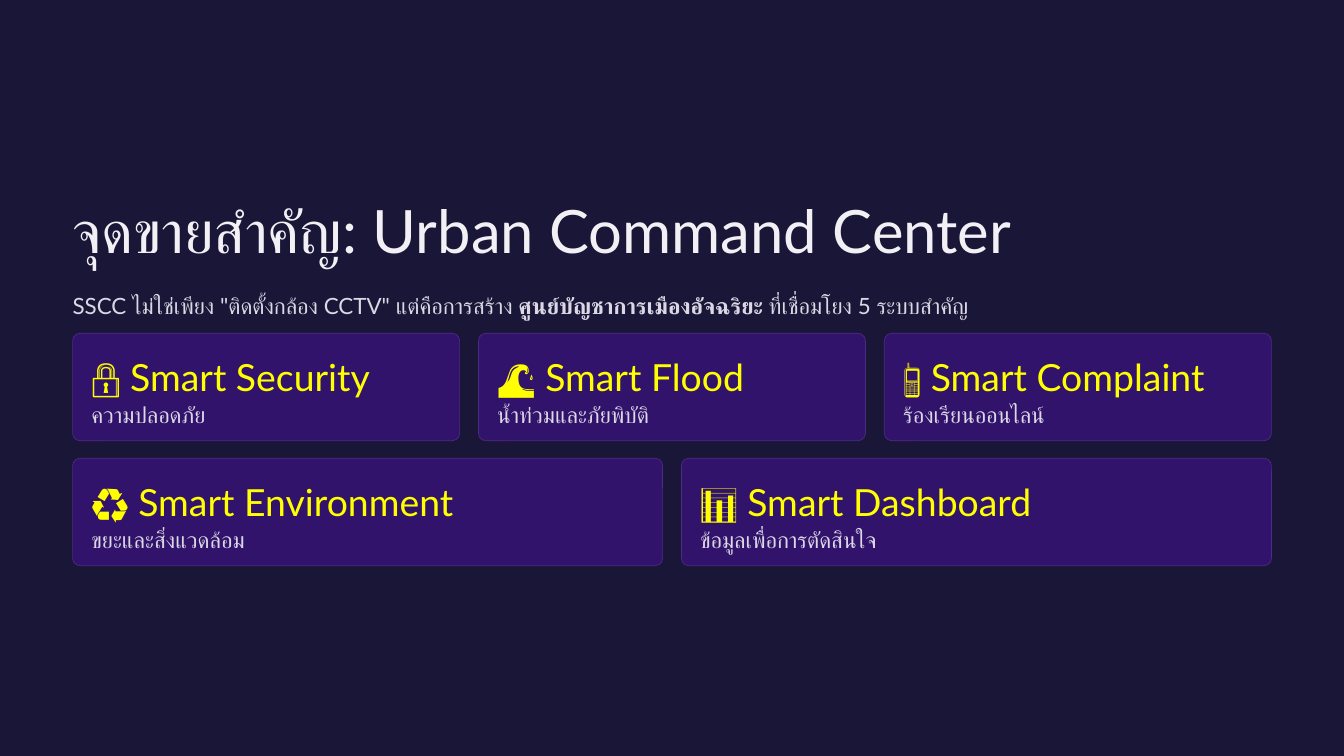
from dataclasses import dataclass

from lxml.etree import SubElement
from pptx import Presentation
from pptx.dml.color import RGBColor
from pptx.enum.shapes import MSO_SHAPE
from pptx.enum.text import MSO_ANCHOR, MSO_AUTO_SIZE, PP_ALIGN
from pptx.oxml.ns import qn
from pptx.util import Inches, Pt


@dataclass(frozen=True)
class Theme:
    font: str = "Lato"
    background: str = "191637"
    card: str = "31136C"
    border: str = "4A2C85"
    title: str = "F2F0F4"
    heading: str = "FFFF00"
    body: str = "DCD7E5"
    title_size: int = 32
    heading_size: int = 20
    body_size: int = 12


theme = Theme()


def write_text(box, text, *, left, top, width, height, size, color, spacing, bold_part=None):
    """Place a text shape and fill it with one line, setting bold_part in bold."""
    box.left, box.top = Inches(left), Inches(top)
    box.width, box.height = Inches(width), Inches(height)
    frame = box.text_frame
    frame.margin_left = frame.margin_top = frame.margin_right = frame.margin_bottom = 0
    frame.word_wrap = False
    frame.auto_size = MSO_AUTO_SIZE.NONE
    frame.vertical_anchor = MSO_ANCHOR.TOP
    para = frame.paragraphs[0]
    para.alignment = PP_ALIGN.LEFT
    para.line_spacing = spacing
    para.space_before = Pt(0)
    before, bold, after = text.partition(bold_part) if bold_part else (text, "", "")
    for part in filter(None, (before, bold, after)):
        span = para.add_run()
        span.text = part
        span.font.name = theme.font
        span.font.size = Pt(size)
        span.font.bold = part == bold_part
        span.font.color.rgb = RGBColor.from_string(color)
        for tag in ("a:ea", "a:cs"):
            SubElement(span.font._element, qn(tag), typeface=theme.font)


deck = Presentation()
deck.slide_width = Inches(10)
deck.slide_height = deck.slide_width * 9 // 16
page = deck.slides.add_slide(deck.slide_layouts[1])
page.background.fill.solid()
page.background.fill.fore_color.rgb = RGBColor.from_string(theme.background)

margin = 0.54
content_width = 10 - 2 * margin

write_text(page.shapes.title, "จุดขายสำคัญ: Urban Command Center",
           left=margin, top=1.42, width=content_width, height=0.42,
           size=theme.title_size, color=theme.title, spacing=1.04)

intro = page.placeholders[1]
intro_format = intro.text_frame.paragraphs[0]._p.get_or_add_pPr()
intro_format.set("marL", "0")
intro_format.set("indent", "0")
SubElement(intro_format, qn("a:buNone"))
write_text(intro,
           'SSCC ไม่ใช่เพียง "ติดตั้งกล้อง CCTV" แต่คือการสร้าง '
           "ศูนย์บัญชาการเมืองอัจฉริยะ ที่เชื่อมโยง 5 ระบบสำคัญ",
           left=margin, top=2.11, width=9.41, height=0.22,
           size=theme.body_size, color=theme.body, spacing=1.33,
           bold_part="ศูนย์บัญชาการเมืองอัจฉริยะ")

card_rows = [
    [("🔒 Smart Security", "ความปลอดภัย"),
     ("🌊 Smart Flood", "น้ำท่วมและภัยพิบัติ"),
     ("📱 Smart Complaint", "ร้องเรียนออนไลน์")],
    [("♻️ Smart Environment", "ขยะและสิ่งแวดล้อม"),
     ("📊 Smart Dashboard", "ข้อมูลเพื่อการตัดสินใจ")],
]
cards_top, card_height, row_pitch, gap, padding = 2.48, 0.8, 0.93, 0.14, 0.14

for row, cards in enumerate(card_rows):
    card_width = (content_width - gap * (len(cards) - 1)) / len(cards)
    top = cards_top + row * row_pitch
    for column, (heading, detail) in enumerate(cards):
        left = margin + column * (card_width + gap)
        card = page.shapes.add_shape(MSO_SHAPE.ROUNDED_RECTANGLE, Inches(left), Inches(top),
                                     Inches(card_width), Inches(card_height))
        card.adjustments[0] = 0.07
        card.shadow.inherit = False
        card.fill.solid()
        card.fill.fore_color.rgb = RGBColor.from_string(theme.card)
        card.line.color.rgb = RGBColor.from_string(theme.border)
        card.line.width = Pt(0.38)
        for text, offset, size, color, spacing in (
            (heading, 0.14, theme.heading_size, theme.heading, 1.04),
            (detail, 0.44, theme.body_size, theme.body, 1.33),
        ):
            write_text(page.shapes.add_textbox(0, 0, 0, 0), text,
                       left=left + padding, top=top + offset,
                       width=card_width - 2 * padding, height=0.22,
                       size=size, color=color, spacing=spacing)

deck.save("out.pptx")
